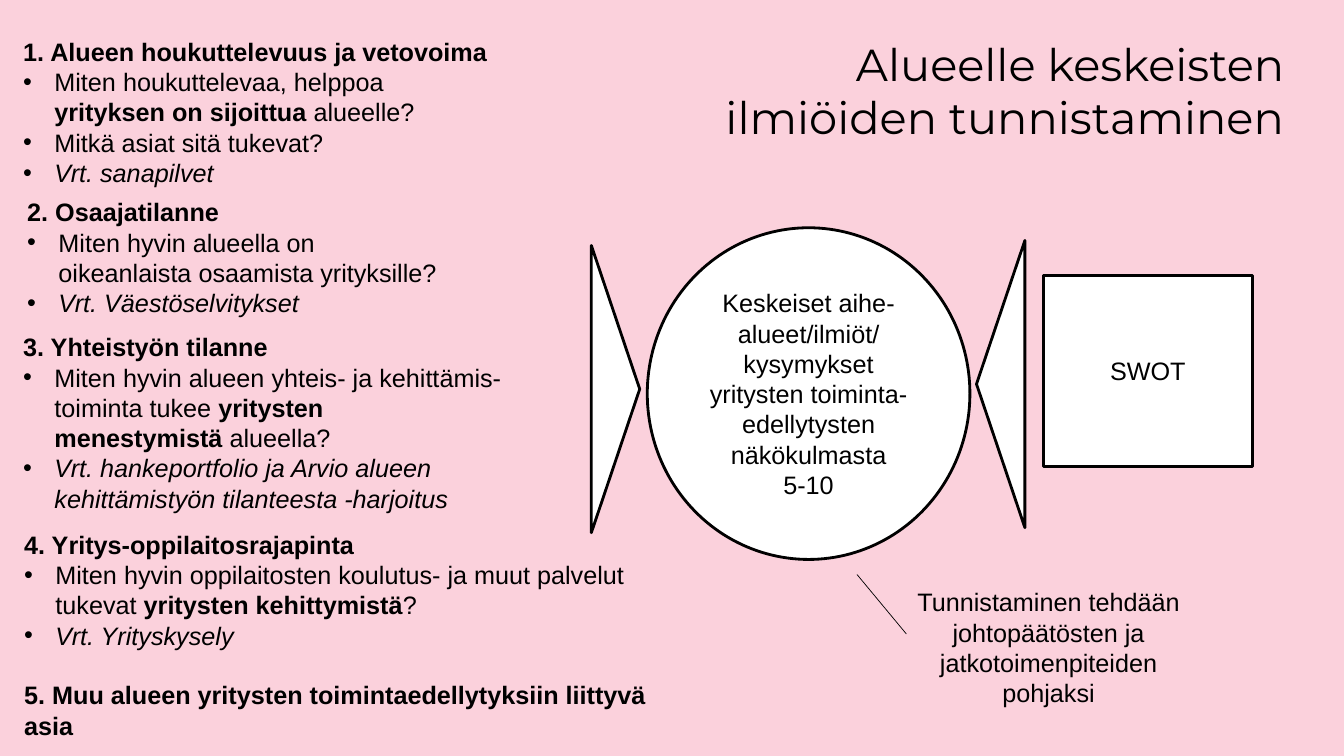
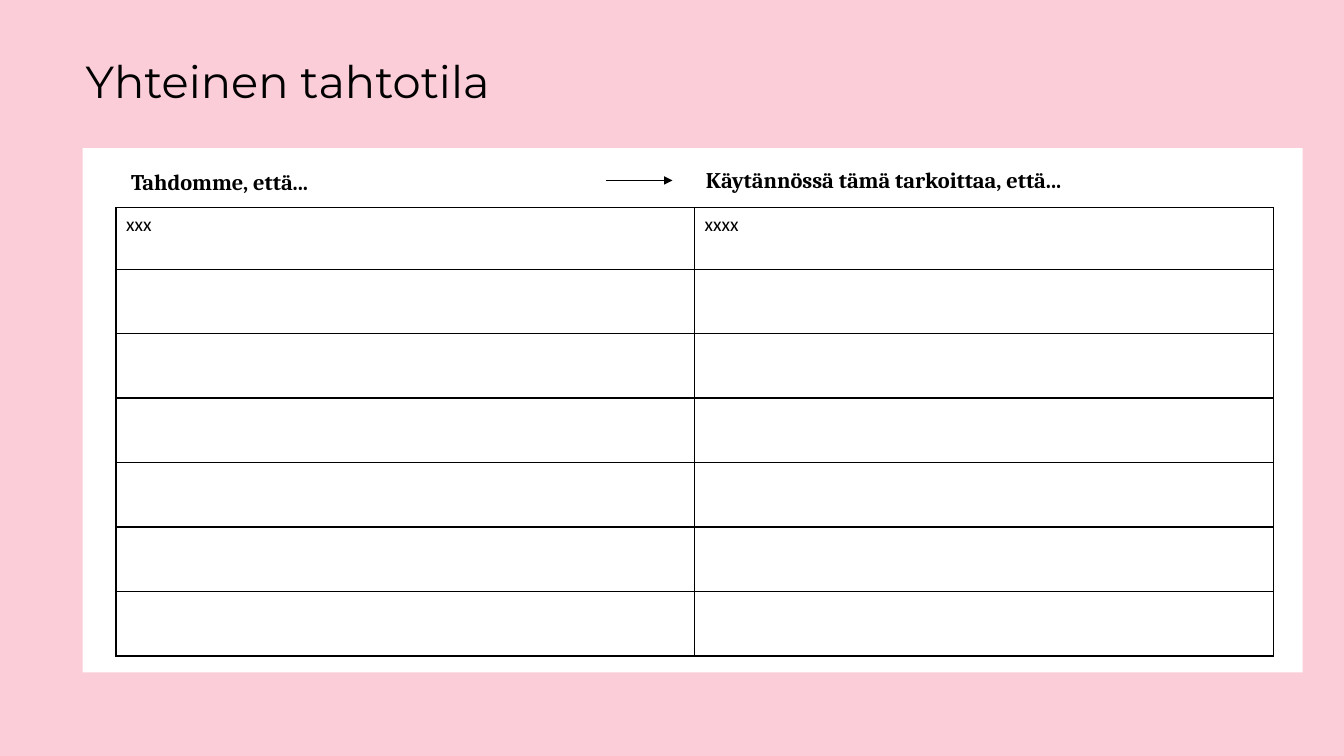
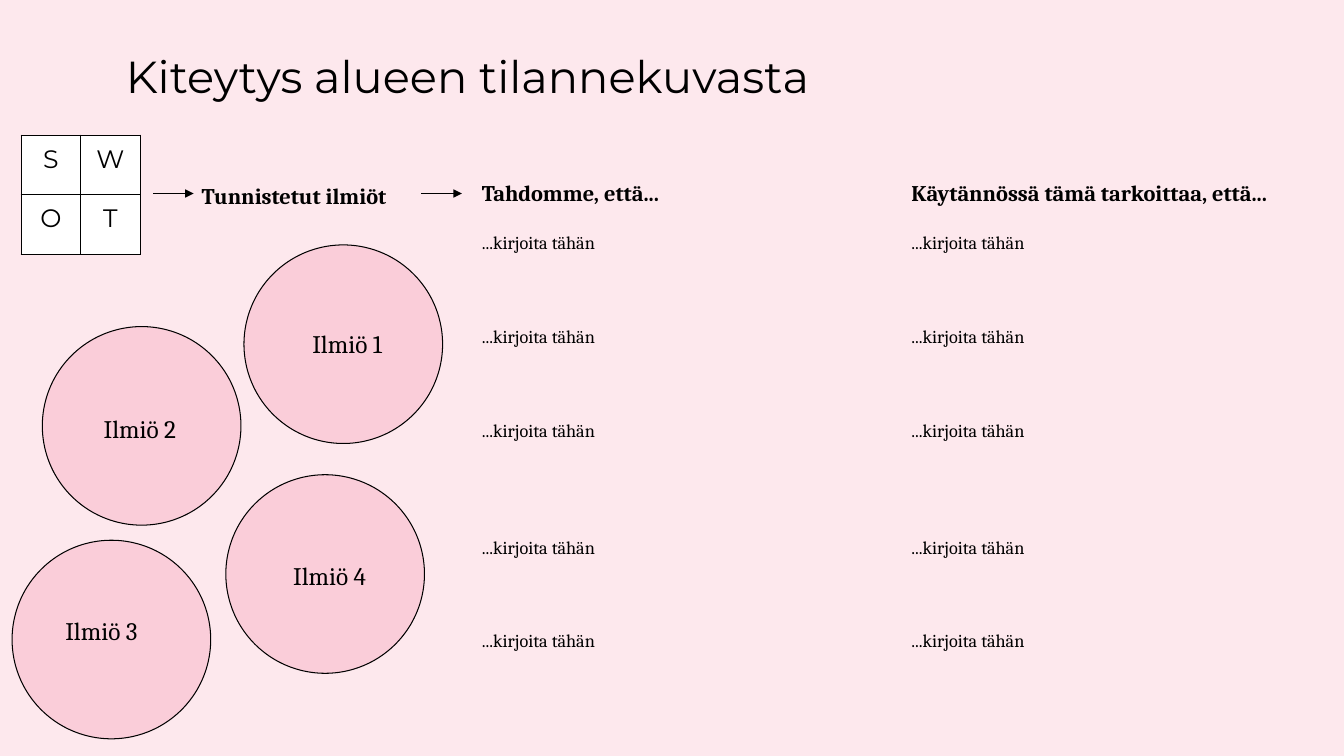
from pptx import Presentation
from pptx import util as u
from pptx.dml.color import RGBColor
from pptx.enum import shapes, text
from pptx.oxml import ns
from lxml import etree

COLORS = {
    "ink": "000000",
    "paper": "FFFFFF",
    "blush": "FBD1DC",
    "rose": "FACDD9",
    "pale": "FDE8ED",
}
SHAPE = shapes.MSO_SHAPE
CENTER = text.PP_ALIGN.CENTER
PROMPT = "...kirjoita tähän"
GOAL = "Tahdomme, että..."
PRACTICE = "Käytännössä tämä tarkoittaa, että..."

SECTIONS = [
    (0.23, 0.36, 6.01, 1.51, "1. Alueen houkuttelevuus ja vetovoima", [
        "Miten houkuttelevaa, helppoa\n*yrityksen on sijoittua* alueelle?",
        "Mitkä asiat sitä tukevat?"], "Vrt. sanapilvet"),
    (0.27, 1.95, 4.82, 1.21, "2. Osaajatilanne", [
        "Miten hyvin alueella on\noikeanlaista osaamista yrityksille?"],
        "Vrt. Väestöselvitykset"),
    (0.23, 3.29, 5.61, 1.82, "3. Yhteistyön tilanne", [
        "Miten hyvin alueen yhteis- ja kehittämis-\n"
        "toiminta tukee *yritysten\nmenestymistä* alueella?"],
        "Vrt. hankeportfolio ja Arvio alueen\nkehittämistyön tilanteesta -harjoitus"),
    (0.24, 5.25, 6.17, 2.12, "4. Yritys-oppilaitosrajapinta", [
        "Miten hyvin oppilaitosten koulutus- ja muut palvelut\n"
        "tukevat *yritysten kehittymistä*?"], "Vrt. Yrityskysely"),
]
OTHER_TOPIC = "5. Muu alueen yritysten toimintaedellytyksiin liittyvä asia"

PHENOMENA = [
    ("Ilmiö 1", 2.42, 2.43, 0.58, 0.73),
    ("Ilmiö 2", 0.42, 3.24, 0.51, 0.76),
    ("Ilmiö 3", 0.12, 5.36, 0.43, 0.64),
    ("Ilmiö 4", 2.24, 4.71, 0.57, 0.75),
]


def rgb(name):
    return RGBColor.from_string(COLORS[name])


def inches(*lengths):
    return [u.Inches(length) for length in lengths]


def style(run, font, size, bold=False, italic=False):
    run.font.name = font
    run.font.size = u.Pt(size)
    run.font.bold = bold
    run.font.italic = italic
    run.font.color.rgb = rgb("ink")


def set_insets(holder, x, y):
    holder.margin_left = holder.margin_right = u.Inches(x)
    holder.margin_top = holder.margin_bottom = u.Inches(y)


def write(frame, lines, font, size, bold=False, align=None):
    frame.word_wrap = True
    frame.text = lines
    for paragraph in frame.paragraphs:
        paragraph.alignment = align
        for run in paragraph.runs:
            style(run, font, size, bold)


def add_label(slide, box, words, font, size, bold=False, align=None, insets=(0, 0)):
    frame = slide.shapes.add_textbox(*inches(*box)).text_frame
    set_insets(frame, *insets)
    write(frame, words, font, size, bold, align)
    return frame


def add_title(slide, box, words, align=None, insets=(0.1, 0.05), spacing=None):
    frame = add_label(slide, box, words, "Montserrat", 32, align=align, insets=insets)
    frame.paragraphs[0].line_spacing = spacing


def add_figure(slide, kind, box, fill="paper", line_width=None, rotation=0):
    figure = slide.shapes.add_shape(kind, *inches(*box))
    figure.shadow.inherit = False
    figure.rotation = rotation
    figure.fill.solid()
    figure.fill.fore_color.rgb = rgb(fill)
    if line_width:
        figure.line.color.rgb = rgb("ink")
        figure.line.width = u.Pt(line_width)
    else:
        figure.line.fill.background()
    return figure


def add_line(slide, start, end, width=0.75, arrow=True):
    line = slide.shapes.add_connector(
        shapes.MSO_CONNECTOR.STRAIGHT, *inches(*start, *end))
    line.line.color.rgb = rgb("ink")
    line.line.width = u.Pt(width)
    if arrow:
        etree.SubElement(line.line._get_or_add_ln(), ns.qn("a:tailEnd"), type="triangle")
    etree.SubElement(line._element.spPr, ns.qn("a:effectLst"))


def set_borders(cell, color, width):
    properties = cell._tc.get_or_add_tcPr()
    for index, side in enumerate(("lnL", "lnR", "lnT", "lnB")):
        border = etree.Element(ns.qn("a:" + side), w=str(u.Pt(width)))
        solid = etree.SubElement(border, ns.qn("a:solidFill"))
        etree.SubElement(solid, ns.qn("a:srgbClr"), val=COLORS[color])
        properties.insert(index, border)


def add_grid(slide, left, top, widths, heights, rows, font, size, fill="paper",
             border=("ink", 1), insets=(0.1, 0.05), align=None, header_size=None):
    box = inches(left, top, sum(widths), sum(heights))
    table = slide.shapes.add_table(len(heights), len(widths), *box).table
    table.first_row = table.horz_banding = False
    for column, width in zip(table.columns, widths):
        column.width = u.Inches(width)
    for r, (height, words) in enumerate(zip(heights, rows)):
        table.rows[r].height = u.Inches(height)
        is_header = bool(header_size) and r == 0
        for c, word in enumerate(words):
            cell = table.cell(r, c)
            set_insets(cell, *insets)
            write(cell.text_frame, word, font, header_size if is_header else size,
                  is_header, align)
            if fill:
                cell.fill.solid()
                cell.fill.fore_color.rgb = rgb(fill)
            else:
                cell.fill.background()
            set_borders(cell, *border)


def add_marked_runs(paragraph, marked, bold=False, italic=False):
    for part, piece in enumerate(marked.split("*")):
        for index, line in enumerate(piece.split("\n")):
            if index:
                paragraph.add_line_break()
            if line:
                run = paragraph.add_run()
                run.text = line
                style(run, "Arial", 18, bold or part % 2 == 1, italic)


def add_bullet(frame, marked, italic=False):
    paragraph = frame.add_paragraph()
    properties = paragraph._p.get_or_add_pPr()
    indent = u.Inches(0.31)
    properties.set("marL", str(indent))
    properties.set("indent", str(-indent))
    etree.SubElement(properties, ns.qn("a:buFont"), typeface="Arial")
    etree.SubElement(properties, ns.qn("a:buChar"), char="•")
    add_marked_runs(paragraph, marked, italic=italic)


def add_section(slide, box, heading, questions, reference):
    frame = add_label(slide, box, heading, "Arial", 18, bold=True)
    for question in questions:
        add_bullet(frame, question)
    add_bullet(frame, reference, italic=True)
    return frame


def add_funnel(slide, left, top):
    for x, y, rotation in ((0, 1.36, 90), (3.82, 1.31, 270)):
        add_figure(slide, SHAPE.ISOSCELES_TRIANGLE, (left + x, top + y, 2.85, 0.48),
                   line_width=2, rotation=rotation)
    topics = ("Keskeiset aihe-alueet/ilmiöt/ kysymykset yritysten "
              "toiminta-edellytysten näkökulmasta\n5-10")
    for kind, box, words in (
            (SHAPE.OVAL, (left + 1.74, top, 3.2, 3.29), topics),
            (SHAPE.RECTANGLE, (left + 5.67, top + 0.47, 2.07, 1.9), "SWOT")):
        figure = add_figure(slide, kind, box, line_width=2)
        figure.text_frame.vertical_anchor = text.MSO_ANCHOR.MIDDLE
        write(figure.text_frame, words, "Arial", 18, align=CENTER)
    add_line(slide, (left + 3.82, top + 3.44), (left + 4.31, top + 4.03), 0.5, False)
    add_label(slide, (left + 4.12, top + 3.51, 3.2, 1.31),
              "Tunnistaminen tehdään johtopäätösten ja jatkotoimenpiteiden pohjaksi",
              "Arial", 18, align=CENTER, insets=(0.1, 0.05))


def add_phenomenon(slide, name, left, top, label_x, label_y):
    add_figure(slide, SHAPE.OVAL, (left, top, 1.97, 1.97), "rose", 0.75)
    add_label(slide, (left + label_x, top + label_y, 1.47, 0.5), name,
              "Cambria", 18, insets=(0.1, 0.1))


def add_slide(deck, background):
    slide = deck.slides.add_slide(deck.slide_layouts[6])
    slide.background.fill.solid()
    slide.background.fill.fore_color.rgb = rgb(background)
    return slide


def build_identification(deck):
    slide = add_slide(deck, "blush")
    for *box, heading, questions, reference in SECTIONS:
        frame = add_section(slide, box, heading, questions, reference)
    other = frame.add_paragraph()
    other.space_before = u.Pt(21)
    add_marked_runs(other, OTHER_TOPIC, bold=True)
    add_funnel(slide, 4.68, 2.26)
    add_title(slide, (6.67, 0.36, 6.07, 1.08),
              "Alueelle keskeisten ilmiöiden tunnistaminen",
              align=text.PP_ALIGN.RIGHT, insets=(0, 0))


def add_goal_sheet(slide, left, top):
    add_figure(slide, SHAPE.RECTANGLE, (left, top, 12.1, 5.2))
    add_label(slide, (left + 0.48, top + 0.2, 4.42, 0.27), GOAL, "Cambria", 16, True)
    add_line(slide, (left + 5.19, top + 0.32), (left + 5.85, top + 0.32))
    add_label(slide, (left + 6.18, top + 0.18, 4.42, 0.54), PRACTICE, "Cambria", 16, True)
    rows = [("xxx", "xxxx")] + [("", "")] * 6
    add_grid(slide, left + 0.33, top + 0.59, [5.74] * 2, [0.61] + [0.64] * 6,
             rows, "Calibri", 14)


def build_shared_will(deck):
    slide = add_slide(deck, "rose")
    add_goal_sheet(slide, 0.82, 1.47)
    add_title(slide, (0.75, 0.54, 11.02, 0.8), "Yhteinen tahtotila", spacing=0.9)


def add_swot_path(slide, left, top):
    add_grid(slide, left, top, [0.59] * 2, [0.59] * 2, ["SW", "OT"], "Montserrat", 18,
             border=("ink", 0.75), insets=(0.09, 0.09), align=CENTER)
    add_label(slide, (left + 1.66, top + 0.34, 2.83, 0.54), "Tunnistetut ilmiöt",
              "Cambria", 16, True, insets=(0.13, 0.13))
    for x in (left + 1.31, left + 3.97):
        add_line(slide, (x, top + 0.58), (x + 0.4, top + 0.58))


def build_summary(deck):
    slide = add_slide(deck, "pale")
    rows = [(GOAL, PRACTICE)] + [(PROMPT, PROMPT)] * 5
    add_grid(slide, 4.65, 1.67, [4.26] * 2, [0.49, 0.93, 0.93, 1.16, 0.93, 0.93],
             rows, "Cambria", 13, fill=None, border=("pale", 1.5),
             insets=(0.13, 0.13), header_size=16)
    add_swot_path(slide, 0.21, 1.34)
    for phenomenon in PHENOMENA:
        add_phenomenon(slide, *phenomenon)
    add_title(slide, (1.15, 0.43, 12.18, 0.8), "Kiteytys alueen tilannekuvasta")


def main():
    deck = Presentation()
    deck.slide_width, deck.slide_height = inches(13.33, 7.5)
    build_identification(deck)
    build_shared_will(deck)
    build_summary(deck)
    deck.save("out.pptx")


if __name__ == "__main__":
    main()
